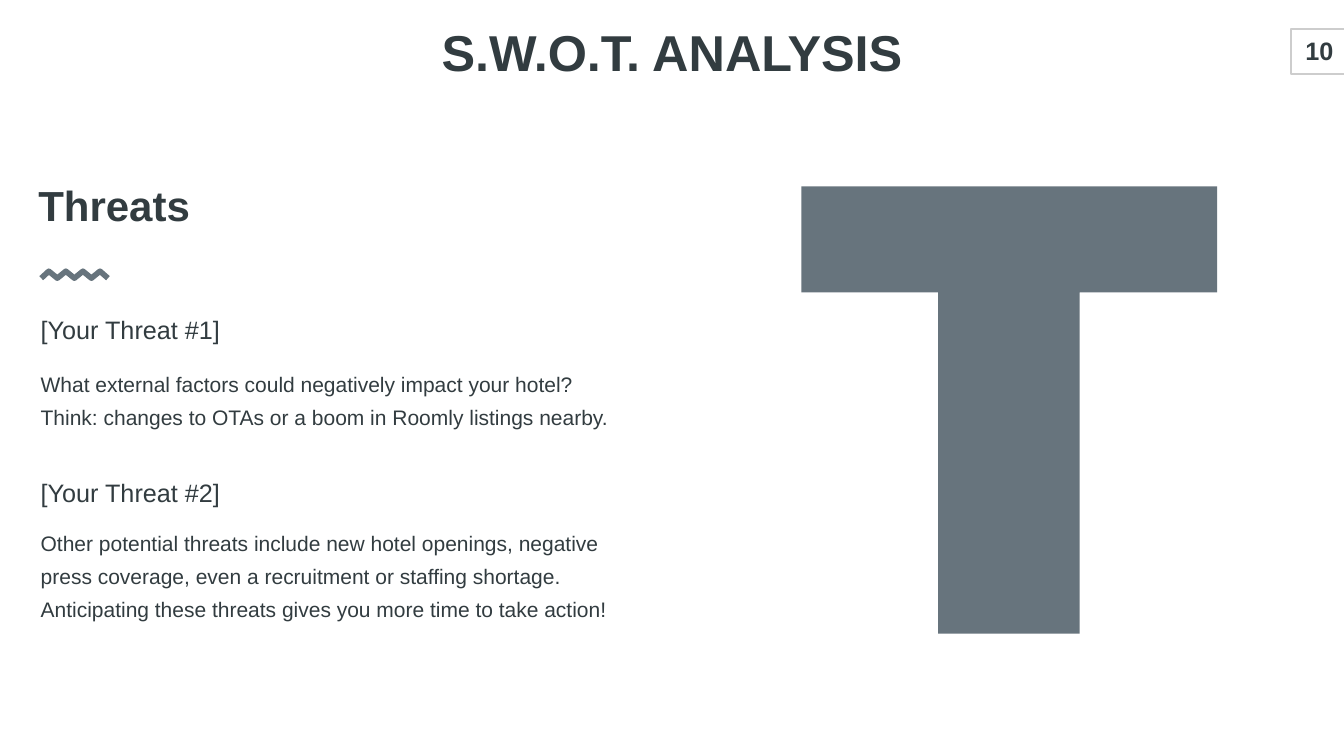
from lxml.etree import SubElement
from pptx import Presentation
from pptx.dml.color import RGBColor
from pptx.enum.shapes import MSO_SHAPE
from pptx.enum.text import MSO_ANCHOR, MSO_AUTO_SIZE, PP_ALIGN
from pptx.oxml.ns import qn
from pptx.util import Cm, Pt


def color(value):
    return RGBColor.from_string(value)


class SlideBuilder:
    font = "Arial"
    ink = "323C40"
    accent = "67747D"
    frame = "CDCDCD"

    def __init__(self, slide):
        self.slide = slide

    def style_text(self, shape, box, text, size, bold=False, align=PP_ALIGN.LEFT,
                   anchor=MSO_ANCHOR.MIDDLE, spacing=1.0):
        shape.left, shape.top, shape.width, shape.height = map(Cm, box)
        text_frame = shape.text_frame
        text_frame.text = text
        text_frame.word_wrap = True
        text_frame.auto_size = MSO_AUTO_SIZE.NONE
        text_frame.vertical_anchor = anchor
        text_frame.margin_left = text_frame.margin_right = 0
        text_frame.margin_top = text_frame.margin_bottom = 0
        paragraph = text_frame.paragraphs[0]
        paragraph.alignment = align
        paragraph.line_spacing = spacing
        paragraph.space_before = Pt(0)
        properties = paragraph._p.get_or_add_pPr()
        properties.set("marL", "0")
        properties.set("indent", "0")
        SubElement(properties, qn("a:buNone"))
        font = paragraph.runs[0].font
        font.name = self.font
        font.size = Pt(size)
        font.bold = bold
        font.color.rgb = color(self.ink)

    def placeholder(self, index, box, text, size, **style):
        self.style_text(self.slide.placeholders[index], box, text, size, **style)

    def text_box(self, box, text, size, **style):
        shape = self.slide.shapes.add_textbox(*map(Cm, box))
        self.style_text(shape, box, text, size, **style)

    def outlined_box(self, box):
        shape = self.slide.shapes.add_shape(MSO_SHAPE.RECTANGLE, *map(Cm, box))
        shape.shadow.inherit = False
        shape.fill.background()
        shape.line.color.rgb = color(self.frame)
        shape.line.width = Pt(3)

    def outline(self, points, closed):
        corners = [(Cm(x), Cm(y)) for x, y in points]
        builder = self.slide.shapes.build_freeform(*corners[0])
        builder.add_line_segments(corners[1:], close=closed)
        shape = builder.convert_to_shape()
        shape.shadow.inherit = False
        return shape

    def filled_outline(self, points):
        shape = self.outline(points, True)
        shape.fill.solid()
        shape.fill.fore_color.rgb = color(self.accent)
        shape.line.fill.background()

    def stroke(self, points, width):
        shape = self.outline(points, False)
        shape.fill.background()
        shape.line.color.rgb = color(self.accent)
        shape.line.width = Pt(width)


def main():
    presentation = Presentation()
    presentation.slide_width = Cm(67.74)
    presentation.slide_height = Cm(38.1)
    comparison_layout = presentation.slide_layouts[4]
    builder = SlideBuilder(presentation.slides.add_slide(comparison_layout))

    builder.outlined_box((65.05, 1.45, 2.92, 2.26))
    builder.text_box((65.53, 1.63, 1.93, 1.83), "10", 36, bold=True, align=PP_ALIGN.CENTER)
    builder.placeholder(0, (17.91, 1.63, 31.93, 2.49), "S.W.O.T. ANALYSIS", 72,
                        bold=True, align=PP_ALIGN.CENTER, spacing=0.8)
    builder.text_box((1.93, 8.76, 17.4, 3.1), "Threats", 60, bold=True)

    threats = [
        (1, 15.82, "[Your Threat #1]", 18.34,
         "What external factors could negatively impact your hotel? "
         "Think: changes to OTAs or a boom in Roomly listings nearby."),
        (3, 24.03, "[Your Threat #2]", 26.37,
         "Other potential threats include new hotel openings, negative press coverage, "
         "even a recruitment or staffing shortage. "
         "Anticipating these threats gives you more time to take action!"),
    ]
    for index, heading_top, heading, detail_top, detail in threats:
        builder.placeholder(index, (2.05, heading_top, 14.45, 1.55), heading, 36)
        builder.placeholder(index + 1, (2.05, detail_top, 29.21, 5.51), detail, 30,
                            anchor=MSO_ANCHOR.TOP, spacing=1.3)

    left, right, top, bottom = 40.39, 61.34, 9.4, 31.93
    stem_left, stem_right, bar_bottom = 47.29, 54.41, 14.73
    builder.filled_outline([
        (left, top), (right, top), (right, bar_bottom), (stem_right, bar_bottom),
        (stem_right, bottom), (stem_left, bottom), (stem_left, bar_bottom), (left, bar_bottom),
    ])

    crest, trough = 13.67, 14.02
    zigzag = [(2.46 + 0.43 * step, trough if step % 2 else crest) for step in range(7)]
    builder.stroke([(2.08, trough), *zigzag, (5.44, trough)], 8)

    presentation.save("out.pptx")


if __name__ == "__main__":
    main()
